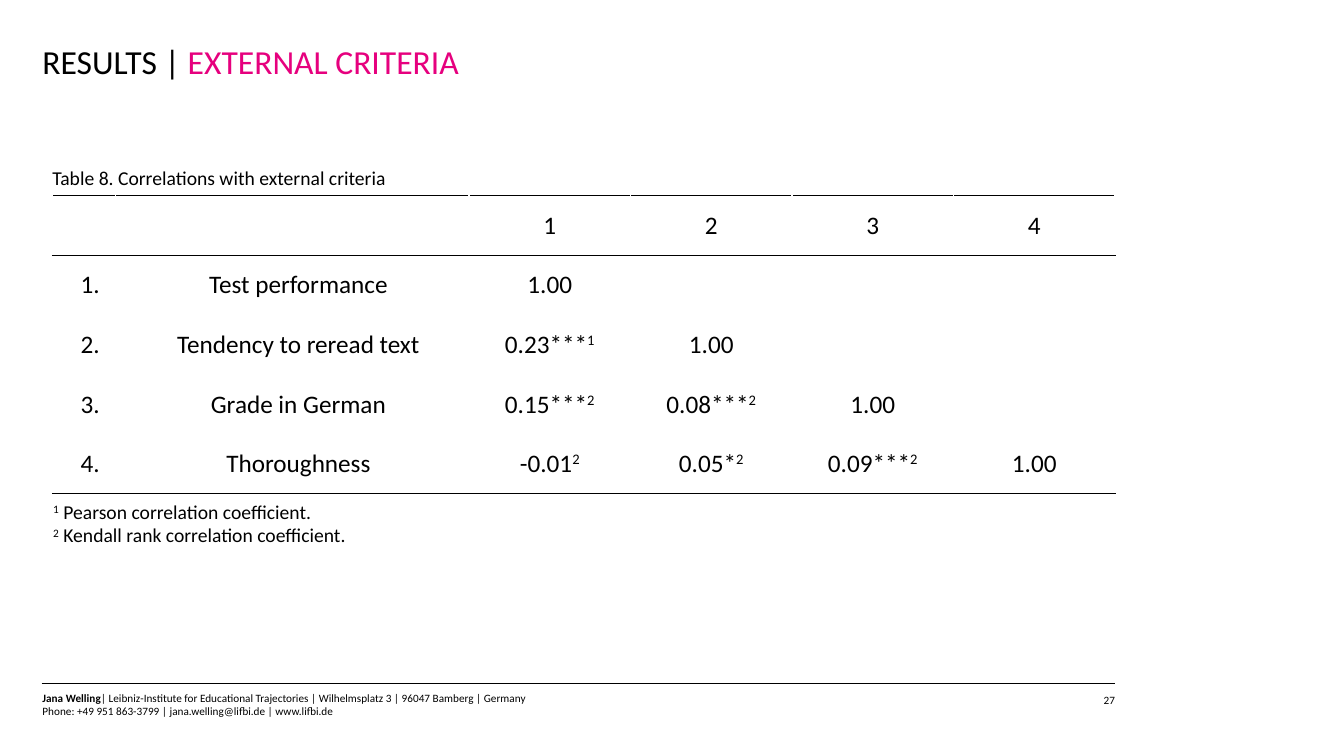
"""Build the results slide with the table of correlations with external criteria."""
from lxml.etree import SubElement
from pptx import Presentation
from pptx.dml.color import RGBColor
from pptx.enum.shapes import MSO_CONNECTOR
from pptx.enum.text import MSO_ANCHOR, PP_ALIGN
from pptx.oxml.ns import qn
from pptx.util import Cm, Pt

COLORS = {"text": "000000", "accent": "E6007E", "paper": "FFFFFF"}
FONT = "Calibri"

TITLE = [("RESULTS | ", {}), ("EXTERNAL CRITERIA", {"color": "accent"})]
CAPTION = [[("Table 8. Correlations with external criteria", {})]]
NOTES = [
    [("1", {"raised": True}), (" Pearson correlation coefficient.", {})],
    [("2", {"raised": True}), (" Kendall rank correlation coefficient.", {})],
]
FOOTER = [
    [("Jana Welling", {"bold": True}),
     ("| Leibniz-Institute for Educational Trajectories | Wilhelmsplatz 3 | 96047 Bamberg | Germany", {})],
    [("Phone: +49 951 863-3799 | jana.welling@lifbi.de | www.lifbi.de", {})],
]
PAGE_NUMBER = [[("27", {})]]

CRITERIA = ["Test performance", "Tendency to reread text", "Grade in German", "Thoroughness"]
CORRELATIONS = [
    [("1.00", "")],
    [("0.23***", "1"), ("1.00", "")],
    [("0.15***", "2"), ("0.08***", "2"), ("1.00", "")],
    [("-0.01", "2"), ("0.05*", "2"), ("0.09***", "2"), ("1.00", "")],
]
COLUMN_WIDTHS = [1.6, 8.9] + [4.07] * len(CRITERIA)
ROW_HEIGHT = 1.5
LABEL_COLUMNS = 2


def add_run(paragraph, text, size, color="text", bold=False, raised=False):
    run = paragraph.add_run()
    run.text = text
    run.font.name = FONT
    run.font.size = Pt(size)
    run.font.bold = bold
    run.font.color.rgb = RGBColor.from_string(COLORS[color])
    if raised:
        run.font._element.set("baseline", "30000")


def add_text(slide, lines, box, size, align=PP_ALIGN.LEFT, inset=True):
    frame = slide.shapes.add_textbox(*map(Cm, box)).text_frame
    frame.word_wrap = True
    if not inset:
        frame.margin_left = frame.margin_top = frame.margin_right = frame.margin_bottom = 0
    for index, runs in enumerate(lines):
        paragraph = frame.add_paragraph() if index else frame.paragraphs[0]
        paragraph.alignment = align
        for text, style in runs:
            add_run(paragraph, text, size, **style)


def add_border(cell, side, color, width):
    line = SubElement(cell._tc.get_or_add_tcPr(), qn(f"a:ln{side}"), w=str(Pt(width)))
    fill = SubElement(line, qn("a:solidFill"))
    SubElement(fill, qn("a:srgbClr"), val=COLORS[color])


def row_borders(row, last_row):
    if row == 0:
        return [("L", "paper", 1), ("R", "paper", 1), ("T", "text", 1), ("B", "text", 0.5)]
    if row == 1:
        return [("T", "text", 0.5)]
    return [("B", "text", 1)] if row == last_row else []


def add_correlation_table(slide):
    header = [("", "")] * LABEL_COLUMNS + [(str(n + 1), "") for n in range(len(CRITERIA))]
    rows = [header] + [
        [(f"{n}.", ""), (name, "")] + values
        for n, (name, values) in enumerate(zip(CRITERIA, CORRELATIONS), 1)
    ]
    table = slide.shapes.add_table(
        len(rows), len(COLUMN_WIDTHS), Cm(1.32), Cm(4.93),
        Cm(sum(COLUMN_WIDTHS)), Cm(ROW_HEIGHT * len(rows))).table
    table.first_row = table.horz_banding = False
    for column, width in zip(table.columns, COLUMN_WIDTHS):
        column.width = Cm(width)
    for row, values in enumerate(rows):
        table.rows[row].height = Cm(ROW_HEIGHT)
        for column in range(len(COLUMN_WIDTHS)):
            cell = table.cell(row, column)
            for border in row_borders(row, len(rows) - 1):
                add_border(cell, *border)
            cell.fill.solid()
            cell.fill.fore_color.rgb = RGBColor.from_string(COLORS["paper"])
            cell.vertical_anchor = MSO_ANCHOR.MIDDLE
            cell.margin_left = cell.margin_top = cell.margin_right = Cm(0.02)
            cell.margin_bottom = 0
            value, note = values[column] if column < len(values) else ("", "")
            if not value:
                continue
            paragraph = cell.text_frame.paragraphs[0]
            paragraph.alignment = PP_ALIGN.CENTER
            if column < LABEL_COLUMNS and row:
                paragraph._p.get_or_add_pPr().set("marL", str(Cm(0.3)))
            add_run(paragraph, value, 18)
            if note:
                add_run(paragraph, note, 18, raised=True)


def add_footer_rule(slide):
    rule = slide.shapes.add_connector(
        MSO_CONNECTOR.STRAIGHT, Cm(1.05), Cm(17.22), Cm(28.1), Cm(17.22))
    rule.line.color.rgb = RGBColor.from_string(COLORS["text"])
    rule.line.width = Pt(0.5)
    SubElement(rule._element.spPr, qn("a:effectLst"))


def add_title(slide):
    title = slide.shapes.title
    title.left, title.top, title.width, title.height = map(Cm, (1.07, 1.04, 27.05, 2.1))
    frame = title.text_frame
    frame.margin_left = frame.margin_top = frame.margin_right = frame.margin_bottom = 0
    frame.vertical_anchor = MSO_ANCHOR.TOP
    paragraph = frame.paragraphs[0]
    paragraph.alignment = PP_ALIGN.LEFT
    for text, style in TITLE:
        add_run(paragraph, text, 24, **style)


def main():
    presentation = Presentation()
    presentation.slide_width, presentation.slide_height = Cm(33.87), Cm(19.05)
    slide = presentation.slides.add_slide(presentation.slide_layouts[5])
    add_footer_rule(slide)
    add_text(slide, PAGE_NUMBER, (26.5, 17.48, 1.6, 0.33), 8, PP_ALIGN.RIGHT, inset=False)
    add_text(slide, FOOTER, (1.07, 17.42, 20.65, 0.69), 8, inset=False)
    add_title(slide)
    add_correlation_table(slide)
    add_text(slide, CAPTION, (1.07, 4.06, 17, 0.86), 14)
    add_text(slide, NOTES, (1.09, 12.47, 17, 1.45), 14)
    presentation.save("out.pptx")


if __name__ == "__main__":
    main()
